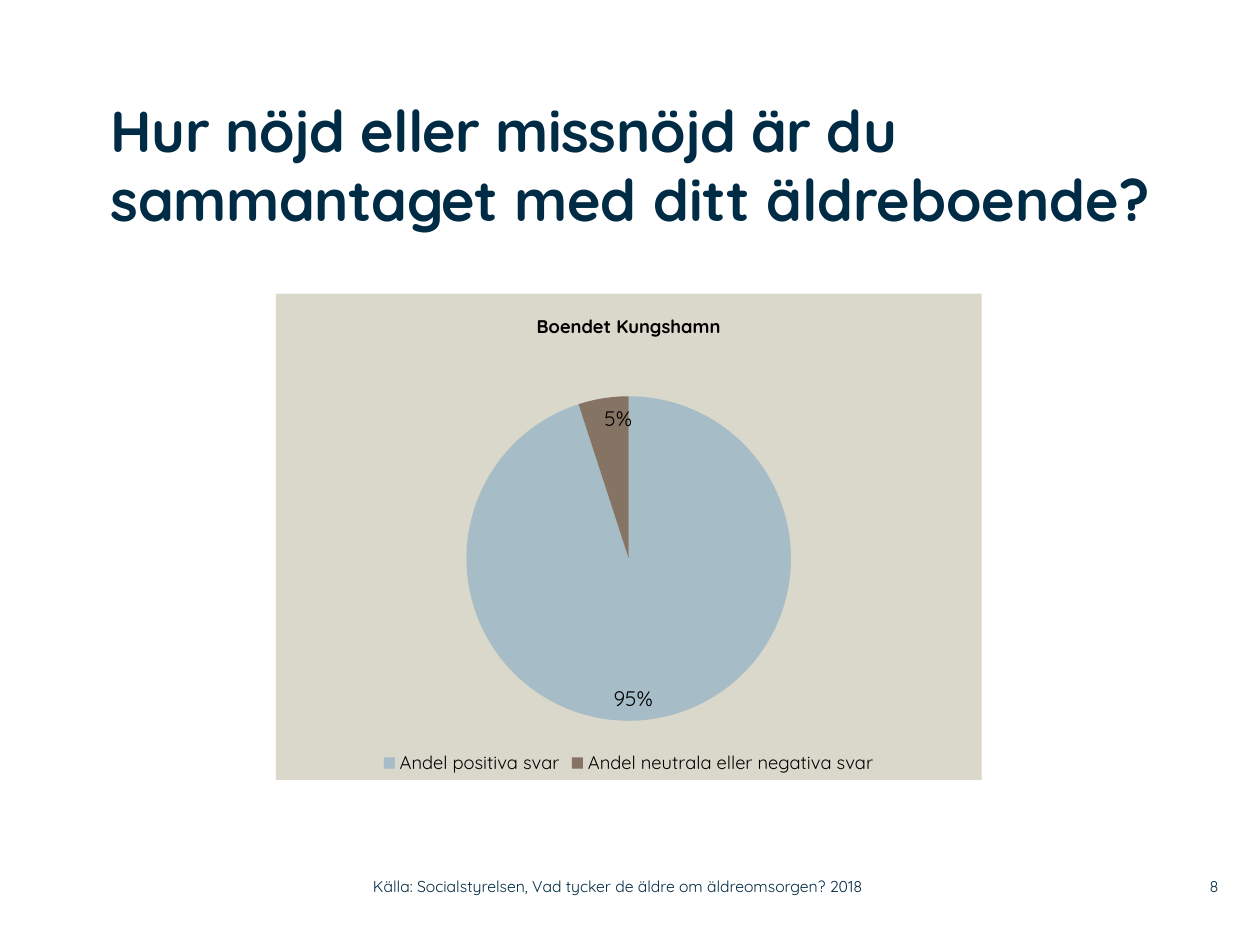
"""Build a survey slide with a pie chart of overall satisfaction."""
from pptx import Presentation
from pptx.chart.data import CategoryChartData
from pptx.dml.color import RGBColor
from pptx.enum.chart import XL_CHART_TYPE as CT, XL_LABEL_POSITION as LP, XL_LEGEND_POSITION as LG
from pptx.enum.text import MSO_ANCHOR as MA, PP_ALIGN as PA
from pptx.oxml import parse_xml
from pptx.oxml.ns import nsdecls
from pptx.util import Inches, Pt

FONT = "Quicksand"
NAVY = RGBColor(0x00, 0x2B, 0x45)
BLACK = RGBColor(0x00, 0x00, 0x00)
BLUE = RGBColor(0xA6, 0xBC, 0xC6)
BROWN = RGBColor(0x85, 0x73, 0x63)
SAND = RGBColor(0xDA, 0xD7, 0xCB)

TEXTS = [
    (("Hur nöjd eller missnöjd är du sammantaget ", "med ditt äldreboende?"),
     (0.88, 0.75, 8.83, 1.42), 33, True, MA.TOP, PA.LEFT),
    (("Källa: Socialstyrelsen, Vad tycker de äldre om äldreomsorgen? 2018",),
     (2.96, 6.89, 4.43, 0.29), 9, False, MA.MIDDLE, PA.LEFT),
    (("8",), (9.2, 6.89, 0.47, 0.29), 9, False, MA.MIDDLE, PA.RIGHT),
]
CHART_TITLE = "Boendet Kungshamn"
CHART_BOX = (2.19, 2.33, 5.6, 3.86)
PLOT = {"x": 0.27, "y": 0.21, "w": 0.46, "h": 0.67}
ANSWERS = [
    ("Andel positiva svar", 95, BLUE),
    ("Andel neutrala eller negativa svar", 5, BROWN),
]


def style(font, size, color, bold=False):
    font.name, font.size, font.bold = FONT, Pt(size), bold
    font.color.rgb = color


def add_text(s, runs, box, size, bold, anchor, align):
    tf = s.shapes.add_textbox(*map(Inches, box)).text_frame
    tf.word_wrap = True
    tf.vertical_anchor = anchor
    tf.margin_left = tf.margin_top = tf.margin_right = tf.margin_bottom = 0
    p = tf.paragraphs[0]
    p.alignment = align
    for text in runs:
        r = p.add_run()
        r.text = text
        style(r.font, size, NAVY, bold)
    return p


def add_pie(s):
    names, values, colors = zip(*ANSWERS)
    data = CategoryChartData()
    data.categories = names
    data.add_series("Series 1", values)
    chart = s.shapes.add_chart(CT.PIE, *map(Inches, CHART_BOX), data).chart
    style(chart.font, 18, BLACK)

    chart.has_title = True
    r = chart.chart_title.text_frame.paragraphs[0].add_run()
    r.text = CHART_TITLE
    style(r.font, 10.5, BLACK, True)
    chart.chart_title.include_in_layout = False

    chart.has_legend = True
    chart.legend.position = LG.BOTTOM
    chart.legend.include_in_layout = False
    style(chart.legend.font, 10.5, BLACK)

    plot = chart.plots[0]
    plot.vary_by_categories = True
    for i, color in enumerate(colors):
        fill = plot.series[0].points[i].format.fill
        fill.solid()
        fill.fore_color.rgb = color
    labels = plot.series[0].data_labels
    labels.show_percentage, labels.show_value = True, False
    labels.number_format, labels.number_format_is_linked = "0%", False
    labels.position = LP.INSIDE_END
    style(labels.font, 12, BLACK)

    space = chart.element
    space.find("{*}txPr").addprevious(parse_xml(
        f'<c:spPr {nsdecls("c", "a")}><a:solidFill><a:srgbClr val="{SAND}"/></a:solidFill>'
        '<a:ln><a:noFill/></a:ln></c:spPr>'))
    area = space.find(".//{*}plotArea")
    for old in area.findall("{*}layout"):
        area.remove(old)
    modes = "".join(f'<c:{k}Mode val="edge"/>' for k in "xy")
    sizes = "".join(f'<c:{k} val="{v}"/>' for k, v in PLOT.items())
    area.insert(0, parse_xml(
        f'<c:layout {nsdecls("c")}><c:manualLayout><c:layoutTarget val="inner"/>'
        f'{modes}{sizes}</c:manualLayout></c:layout>'))


def main():
    prs = Presentation()
    prs.slide_width, prs.slide_height = Inches(10), Inches(7.5)
    s = prs.slides.add_slide(prs.slide_layouts[6])
    for item in TEXTS:
        p = add_text(s, *item)
        if len(p.runs) > 1:
            p.runs[0].font._element.set("spc", "-30")
    add_pie(s)
    prs.save("out.pptx")


if __name__ == "__main__":
    main()
